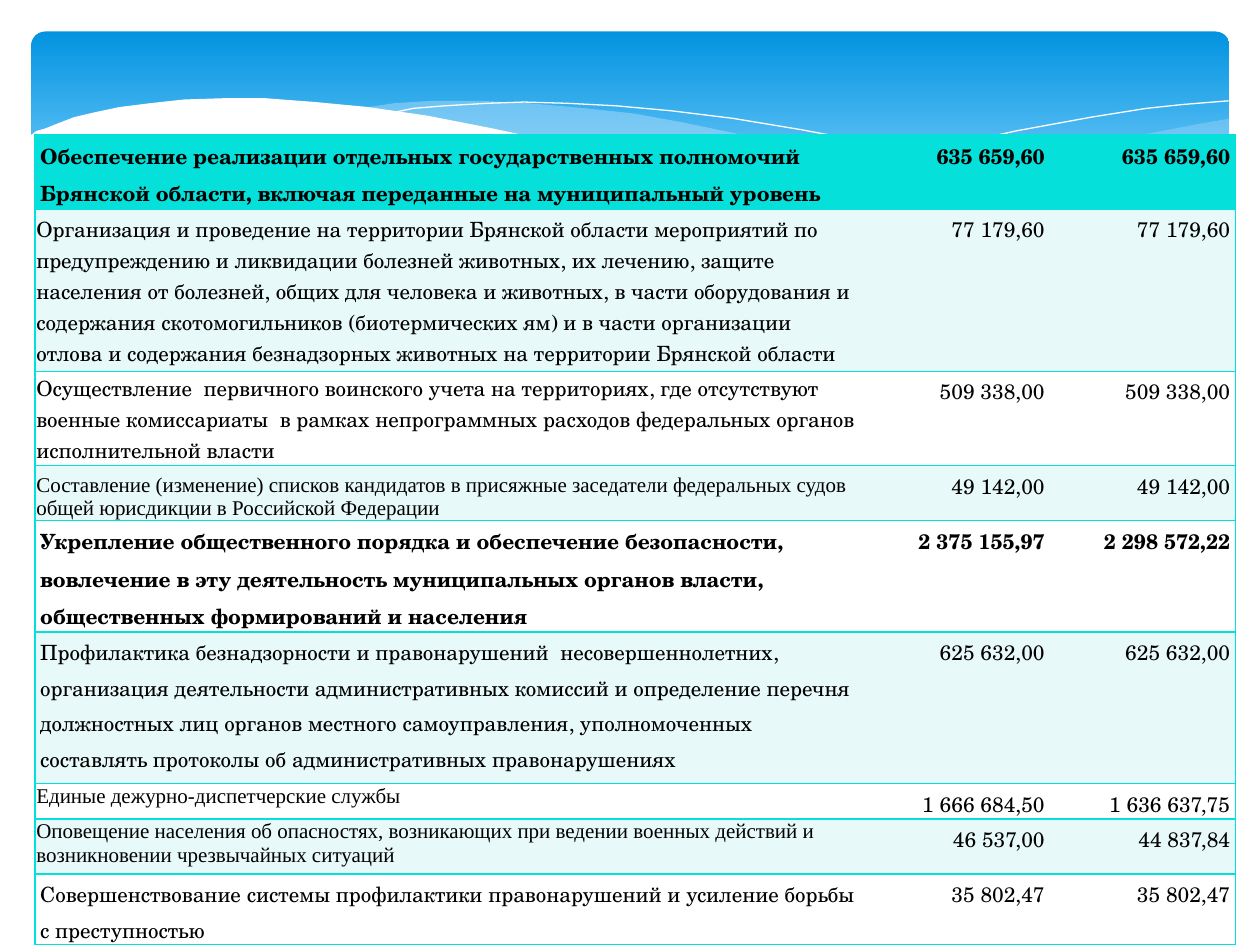
import lxml.etree
import pptx
import pptx.dml.color
import pptx.enum.shapes
import pptx.enum.text
import pptx.oxml.ns
import pptx.util

Pt = pptx.util.Pt
ANCHOR = pptx.enum.text.MSO_ANCHOR
ALIGN = pptx.enum.text.PP_ALIGN
COLORS = {
    "sky_top": "0293E0", "sky_bottom": "83D3FE", "wave": "C6E7FC",
    "white": "FFFFFF", "teal": "05E0DB", "mint": "E7F9F8", "text": "000000",
}
SERIF, TIMES = "TeX Gyre Schola", "Times New Roman"


def color(name):
    return pptx.dml.color.RGBColor.from_string(COLORS[name])


def write(cell, text, font=SERIF, bold=False, align=ALIGN.LEFT, spacing=1.0,
          anchor=ANCHOR.TOP, side=3, top=0):
    """Fill a table cell with one formatted paragraph; margins in points."""
    cell.margin_left = cell.margin_right = Pt(side)
    cell.margin_top, cell.margin_bottom = Pt(top), Pt(0)
    cell.vertical_anchor = anchor
    paragraph = cell.text_frame.paragraphs[0]
    paragraph.alignment, paragraph.line_spacing = align, spacing
    run = paragraph.add_run()
    run.text = text
    run.font.name, run.font.size, run.font.bold = font, Pt(12), bold
    run.font.color.rgb = color("text")


presentation = pptx.Presentation()
presentation.slide_width, presentation.slide_height = Pt(720), Pt(540)
slide = presentation.slides.add_slide(presentation.slide_layouts[6])

# Sky banner
banner = slide.shapes.add_shape(
    pptx.enum.shapes.MSO_SHAPE.ROUNDED_RECTANGLE, Pt(18), Pt(18), Pt(684.5), Pt(112.5))
banner.adjustments[0] = 0.07
banner.shadow.inherit = False
banner.line.fill.background()
banner.fill.gradient()
banner.fill.gradient_angle = 270
for stop, position, name in zip(banner.fill.gradient_stops, (0, 0.9), ("sky_top", "sky_bottom")):
    stop.position, stop.color.rgb = position, color(name)

# Waves: fill, opacity in percent, outline in hundredths of an inch
WAVES = [
    ("wave", 29, [(976, 94), (948, 99), (906, 107), (861, 118), (805, 131), (753, 143),
                  (706, 152), (661, 160), (705, 165), (745, 169), (781, 172), (814, 172),
                  (844, 171), (872, 169), (905, 163), (935, 156), (963, 147), (976, 141)]),
    ("wave", 40, [(893, 167), (837, 159), (775, 149), (706, 134), (629, 116), (584, 106),
                  (541, 97), (502, 90), (465, 86), (420, 82), (380, 80), (344, 80),
                  (313, 82), (286, 86), (323, 90), (362, 97), (404, 106), (449, 116),
                  (530, 135), (601, 150), (650, 158), (695, 165), (736, 169), (773, 172),
                  (807, 173), (838, 172), (867, 170)]),
    (None, 100, [(309, 90), (328, 86), (353, 84), (387, 82), (416, 81), (450, 82),
                 (489, 84), (533, 88), (582, 94), (636, 103), (695, 114), (760, 128),
                 (831, 145), (907, 166)]),
    (None, 100, [(613, 151), (653, 141), (695, 130), (748, 117), (806, 104), (866, 93),
                 (910, 86), (938, 83), (975, 80)]),
    ("white", 100, [(977, 141), (950, 151), (920, 159), (887, 166), (850, 170), (809, 171),
                    (761, 170), (708, 165), (648, 156), (579, 144), (503, 128), (447, 114),
                    (391, 102), (340, 92), (292, 85), (250, 81), (211, 78), (177, 78),
                    (146, 79), (119, 82), (95, 85), (76, 89), (59, 93), (46, 98),
                    (36, 102), (29, 104), (25, 107), (23, 107), (23, 224), (977, 224)]),
]
for fill, opacity, points in WAVES:
    builder = slide.shapes.build_freeform(*points[0], scale=Pt(0.72))
    builder.add_line_segments(points[1:], close=fill is not None)
    wave = builder.convert_to_shape()
    wave.shadow.inherit = False
    if fill is None:
        wave.fill.background()
        wave.line.color.rgb = color("white")
        wave.line.width = Pt(0)
        continue
    wave.line.fill.background()
    wave.fill.solid()
    wave.fill.fore_color.rgb = color(fill)
    if opacity < 100:
        srgb = wave.fill._xPr.find(".//" + pptx.oxml.ns.qn("a:srgbClr"))
        lxml.etree.SubElement(srgb, pptx.oxml.ns.qn("a:alpha"), val=str(opacity * 1000))

# Budget table: row height, fill, label, label format, two amounts
SPACED = {"spacing": 1.15}
HEADING = {"spacing": 1.15, "bold": True}
TIGHT = {"side": 0.75, "top": 0.75}
MIDDLE = {**TIGHT, "anchor": ANCHOR.MIDDLE}
PLAIN = {**TIGHT, "font": TIMES}
ROWS = [
    (34.5, "teal", "Обеспечение реализации отдельных государственных полномочий Брянской области, "
     "включая переданные на муниципальный уровень", HEADING, "635 659,60", "635 659,60"),
    (92.75, "mint", "Организация и проведение на территории Брянской области мероприятий по "
     "предупреждению и ликвидации болезней животных, их лечению, защите населения от болезней, "
     "общих для человека и животных, в части оборудования и содержания скотомогильников "
     "(биотермических ям) и в части организации отлова и содержания безнадзорных животных "
     "на территории Брянской области", MIDDLE, "77 179,60", "77 179,60"),
    (46.75, "white", "Осуществление  первичного воинского учета на территориях, где отсутствуют "
     "военные комиссариаты  в рамках непрограммных расходов федеральных органов "
     "исполнительной власти", MIDDLE, "509 338,00", "509 338,00"),
    (31.5, "mint", "Составление (изменение) списков кандидатов в присяжные заседатели федеральных "
     "судов общей юрисдикции в Российской Федерации",
     {**PLAIN, "anchor": ANCHOR.BOTTOM}, "49 142,00", "49 142,00"),
    (51, "white", "Укрепление общественного порядка и обеспечение безопасности, вовлечение в эту "
     "деятельность муниципальных органов власти, общественных формирований и населения",
     HEADING, "2 375 155,97", "2 298 572,22"),
    (86.5, "mint", "Профилактика безнадзорности и правонарушений  несовершеннолетних, организация "
     "деятельности административных комиссий и определение перечня должностных лиц органов "
     "местного самоуправления, уполномоченных составлять протоколы об административных "
     "правонарушениях", SPACED, "625 632,00", "625 632,00"),
    (16.5, "white", "Единые дежурно-диспетчерские службы", PLAIN, "1 666 684,50", "1 636 637,75"),
    (31.5, "mint", "Оповещение населения об опасностях, возникающих при ведении военных действий и "
     "возникновении чрезвычайных ситуаций", PLAIN, "46 537,00", "44 837,84"),
    (34.5, "white", "Совершенствование системы профилактики правонарушений и усиление борьбы "
     "с преступностью", SPACED, "35 802,47", "35 802,47"),
]
COLUMN_WIDTHS = (474, 106, 106)
table = slide.shapes.add_table(
    len(ROWS), len(COLUMN_WIDTHS), Pt(20), Pt(77), Pt(sum(COLUMN_WIDTHS)),
    Pt(sum(row[0] for row in ROWS))).table
table.first_row = table.horz_banding = False
for column, width in zip(table.columns, COLUMN_WIDTHS):
    column.width = Pt(width)

for row_index, (height, fill, label, label_format, *amounts) in enumerate(ROWS):
    table.rows[row_index].height = Pt(height)
    for column_index, text in enumerate([label, *amounts]):
        cell = table.cell(row_index, column_index)
        if column_index == 0:
            write(cell, text, **label_format)
        else:
            write(cell, text, align=ALIGN.RIGHT, spacing=1.15,
                  bold=label_format.get("bold", False))
        properties = cell._tc.get_or_add_tcPr()
        visible = {"L": column_index == 0, "R": column_index == 2, "T": True, "B": True}
        for edge, shown in visible.items():
            border = lxml.etree.SubElement(
                properties, pptx.oxml.ns.qn("a:ln" + edge), w=str(Pt(1)))
            paint = lxml.etree.SubElement(
                border, pptx.oxml.ns.qn("a:solidFill" if shown else "a:noFill"))
            if shown:
                lxml.etree.SubElement(paint, pptx.oxml.ns.qn("a:srgbClr"), val=COLORS["teal"])
        cell.fill.solid()
        cell.fill.fore_color.rgb = color(fill)

presentation.save("out.pptx")
